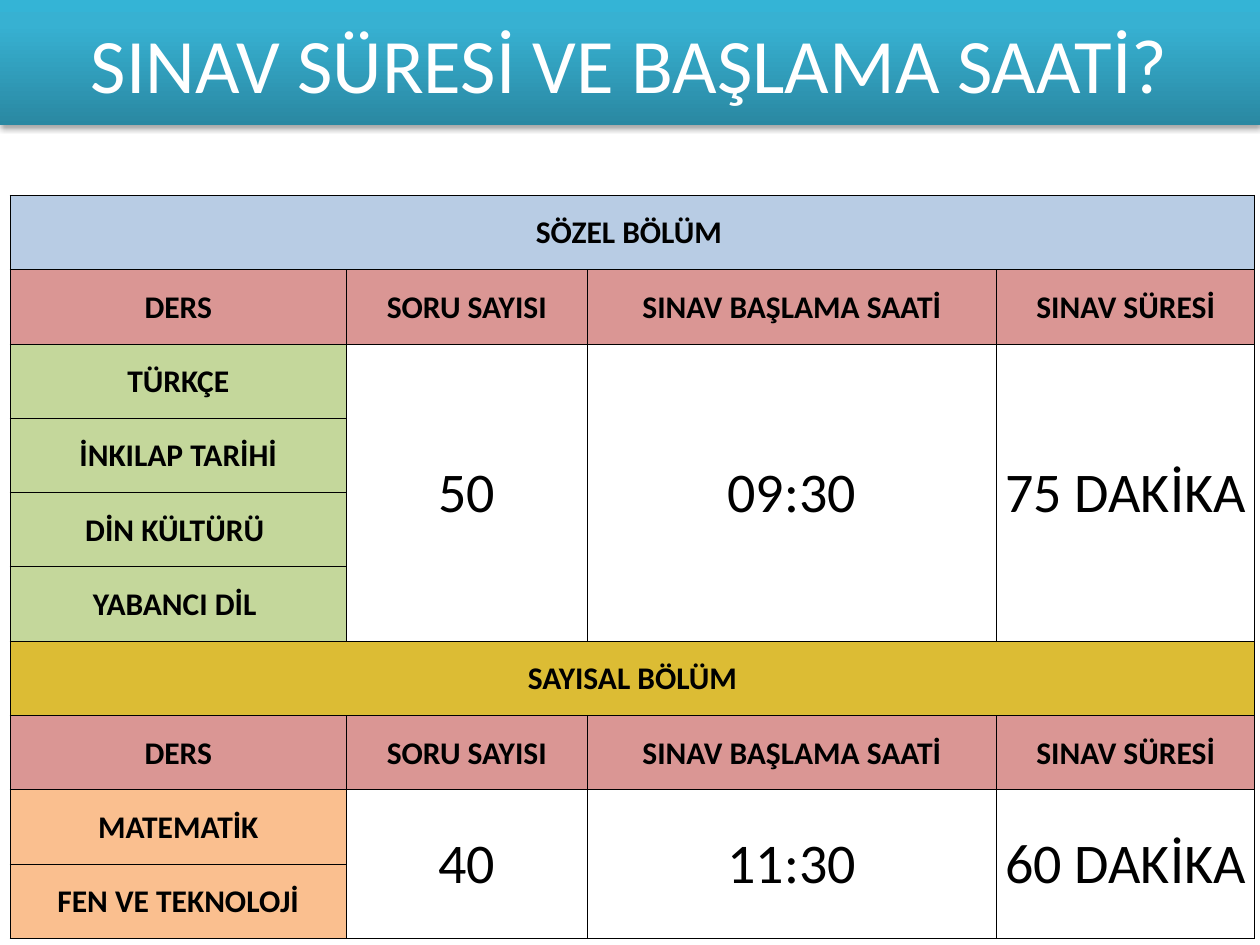
from lxml import etree
from pptx import Presentation
from pptx import util as u
from pptx.dml.color import RGBColor
from pptx.enum import text
from pptx.oxml import parse_xml
from pptx.oxml.ns import nsdecls

TITLE = "SINAV SÜRESİ VE BAŞLAMA SAATİ?"
HEADINGS = ["DERS", "SORU SAYISI", "SINAV BAŞLAMA SAATİ", "SINAV SÜRESİ"]
SECTIONS = [
    {"name": "SÖZEL BÖLÜM ", "band": "blue", "tint": "green",
     "lessons": ["TÜRKÇE", "İNKILAP TARİHİ", "DİN KÜLTÜRÜ ", "YABANCI DİL "],
     "values": ["50", "09:30", "75 DAKİKA"]},
    {"name": "SAYISAL BÖLÜM", "band": "gold", "tint": "orange",
     "lessons": ["MATEMATİK", "FEN VE TEKNOLOJİ"],
     "values": ["40", "11:30", "60 DAKİKA"]},
]
COLORS = {"black": "000000", "white": "FFFFFF", "blue": "B8CCE4",
          "rose": "DA9694", "green": "C4D79B", "gold": "DCBC34",
          "orange": "FABF8F"}
TITLE_STOPS = [(0, "2A88A2"), (80, "37B1D2"), (100, "34B4D6")]
COLUMN_WIDTHS = [2.67, 1.91, 3.25, 2.05]
ROW_HEIGHT = 0.59
LABEL = {"size": u.Pt(18), "bold": True, "name": "Calibri"}
VALUE = {"size": u.Pt(32), "bold": False, "name": "Calibri"}
HEADER = {"size": u.Pt(44), "bold": False, "name": "Calibri"}
CELL = {"vertical_anchor": text.MSO_ANCHOR.MIDDLE,
        "margin_left": u.Inches(0.01), "margin_right": u.Inches(0.01),
        "margin_top": u.Inches(0.01), "margin_bottom": 0}


def set_values(target, values):
    for name, value in values.items():
        setattr(target, name, value)


def write(frame, words, font, color):
    para = frame.paragraphs[0]
    para.alignment = text.PP_ALIGN.CENTER
    span = para.add_run()
    span.text = words
    set_values(span.font, font)
    span.font.color.rgb = RGBColor.from_string(COLORS[color])


def add_title(page):
    title = page.shapes.title
    set_values(title, {"left": 0, "top": 0, "width": u.Inches(10),
                       "height": u.Inches(0.99)})
    title.text_frame.vertical_anchor = text.MSO_ANCHOR.MIDDLE
    write(title.text_frame, TITLE, HEADER, "white")
    stops = "".join(f'<a:gs pos="{pos * 1000}"><a:srgbClr val="{color}"/></a:gs>'
                    for pos, color in TITLE_STOPS)
    properties = title.element.spPr
    properties.append(parse_xml(
        f'<a:gradFill {nsdecls("a")} rotWithShape="1"><a:gsLst>{stops}</a:gsLst>'
        '<a:lin ang="16200000" scaled="0"/></a:gradFill>'))
    properties.append(parse_xml(
        f'<a:effectLst {nsdecls("a")}><a:outerShdw blurRad="{u.Pt(3.1)}" '
        f'dist="{u.Pt(1.8)}" dir="5400000" rotWithShape="0">'
        f'<a:srgbClr val="{COLORS["black"]}"><a:alpha val="35000"/></a:srgbClr>'
        '</a:outerShdw></a:effectLst>'))


def outline(cell):
    properties = cell._tc.get_or_add_tcPr()
    for index, side in enumerate(("lnL", "lnR", "lnT", "lnB")):
        properties.insert(index, parse_xml(
            f'<a:{side} {nsdecls("a")} w="{u.Pt(0.5)}"><a:solidFill>'
            f'<a:srgbClr val="{COLORS["black"]}"/></a:solidFill></a:{side}>'))


def fill_cell(cell, words, font, color=None):
    if color:
        cell.fill.solid()
        cell.fill.fore_color.rgb = RGBColor.from_string(COLORS[color])
    write(cell.text_frame, words, font, "black")


def add_section(table, top, section):
    """Fill one exam section and return the row after it."""
    first = top + 2
    last = first + len(section["lessons"]) - 1
    table.cell(top, 0).merge(table.cell(top, len(HEADINGS) - 1))
    fill_cell(table.cell(top, 0), section["name"], LABEL, section["band"])
    for column, heading in enumerate(HEADINGS):
        fill_cell(table.cell(top + 1, column), heading, LABEL, "rose")
    for row, lesson in enumerate(section["lessons"], first):
        fill_cell(table.cell(row, 0), lesson, LABEL, section["tint"])
    for column, value in enumerate(section["values"], 1):
        table.cell(first, column).merge(table.cell(last, column))
        fill_cell(table.cell(first, column), value, VALUE)
    return last + 1


def add_timetable(page):
    row_count = sum(2 + len(section["lessons"]) for section in SECTIONS)
    table = page.shapes.add_table(
        row_count, len(HEADINGS), u.Inches(0.08), u.Inches(1.55),
        u.Inches(sum(COLUMN_WIDTHS)), u.Inches(ROW_HEIGHT * row_count)).table
    set_values(table, {"first_row": False, "horz_banding": False})
    for column, width in zip(table.columns, COLUMN_WIDTHS):
        column.width = u.Inches(width)
    for row in table.rows:
        row.height = u.Inches(ROW_HEIGHT)
    for cell in table.iter_cells():
        set_values(cell, CELL)
        cell.fill.background()
        outline(cell)
    top = 0
    for section in SECTIONS:
        top = add_section(table, top, section)


def main():
    deck = Presentation()
    set_values(deck, {"slide_width": u.Inches(10), "slide_height": u.Inches(7.5)})
    page = deck.slides.add_slide(deck.slide_layouts[5])
    add_title(page)
    add_timetable(page)
    deck.save("out.pptx")


if __name__ == "__main__":
    main()
